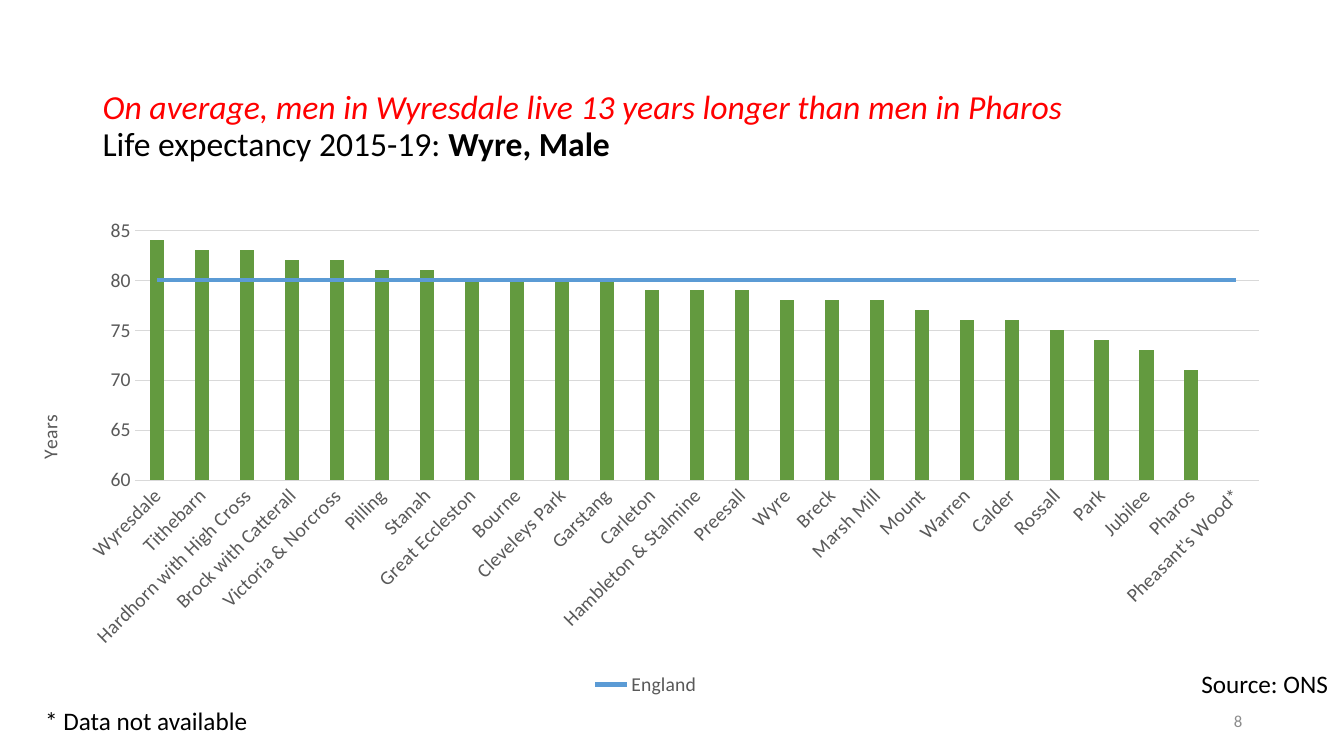
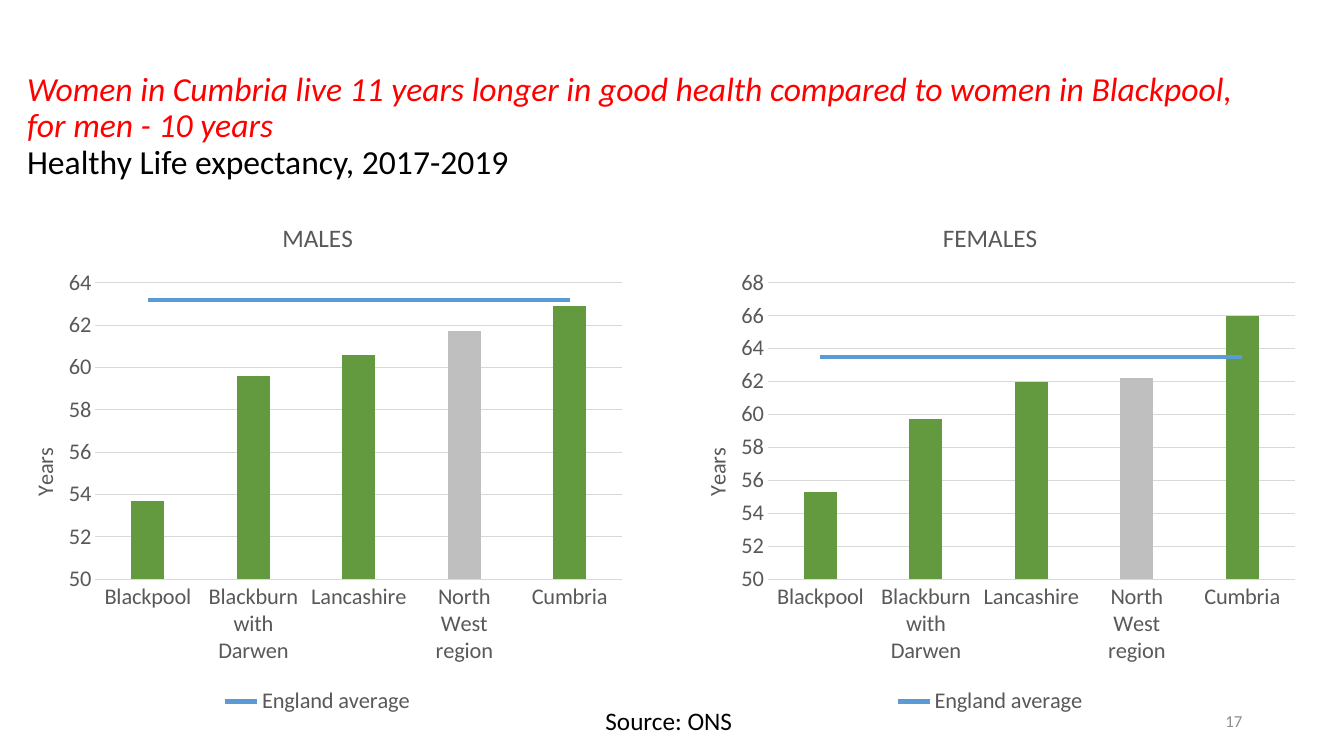
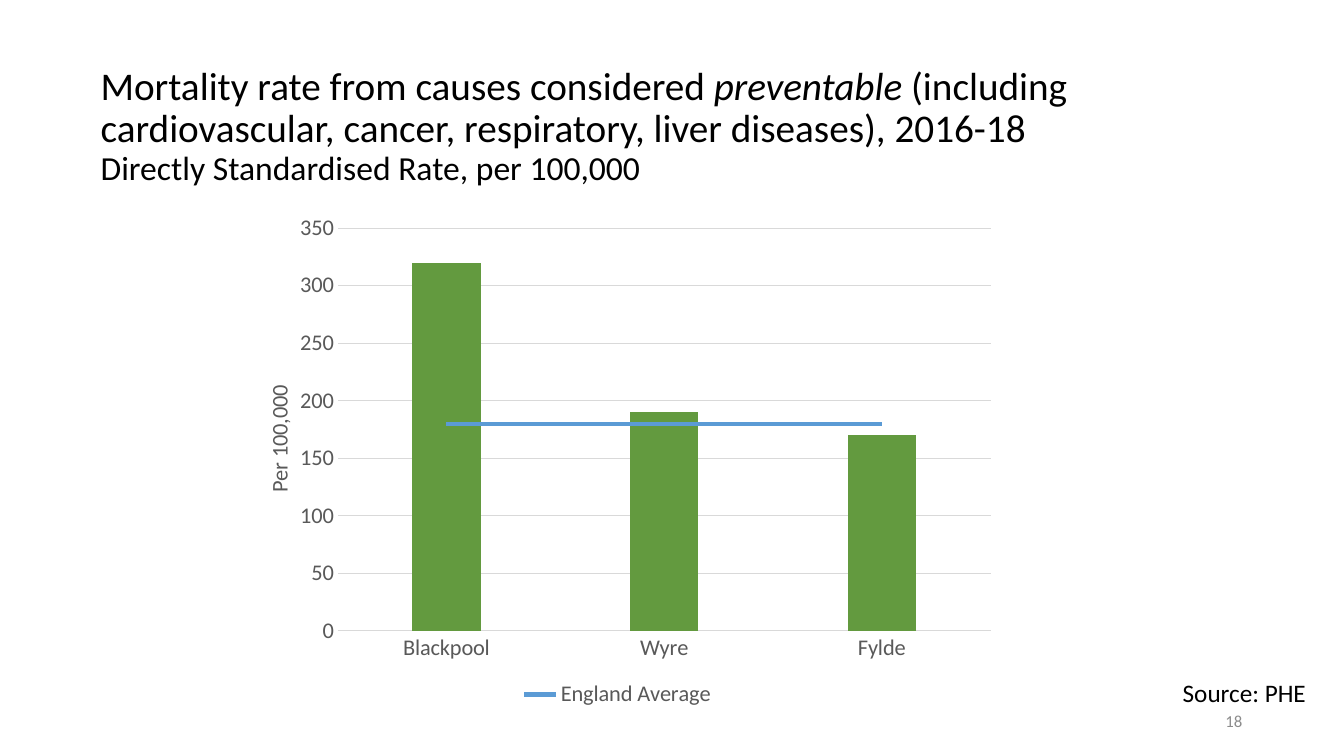
"""Life expectancy and mortality slides with column charts and an England reference line."""
from lxml import etree
from pptx import Presentation
from pptx.chart.data import CategoryChartData
from pptx.dml.color import RGBColor
from pptx.enum.chart import XL_CHART_TYPE as CT, XL_LEGEND_POSITION as LP
from pptx.enum.chart import XL_MARKER_STYLE as MS, XL_TICK_MARK as TM
from pptx.enum.text import MSO_ANCHOR as ANCHOR, PP_ALIGN as ALIGN
from pptx.oxml.ns import qn
from pptx.util import Inches, Pt

COLORS = {"black": "000000", "red": "FF0000", "label": "595959", "number": "8C8C8C",
          "grid": "D9D9D9", "bar": "639A3F", "region": "BFBFBF", "england": "5B9BD5"}
FONT = "Calibri"


def rgb(name):
    return RGBColor.from_string(COLORS[name])


def style(font, size, color="black", **flags):
    font.name, font.size, font.color.rgb = FONT, Pt(size), rgb(color)
    for flag, value in flags.items():
        setattr(font, flag, value)


def add(parent, tag, val=None):
    el = etree.SubElement(parent, qn(tag))
    if val is not None:
        el.set("val", str(val))
    return el


def place(parent, index, inner=False, **fractions):
    for old in parent.findall(qn("c:layout")):
        parent.remove(old)
    layout = etree.Element(qn("c:layout"))
    manual = add(layout, "c:manualLayout")
    if inner:
        add(manual, "c:layoutTarget", "inner")
    for key in ("x", "y"):
        add(manual, f"c:{key}Mode", "edge")
    for key, value in fractions.items():
        add(manual, f"c:{key}", value)
    parent.insert(index, layout)


def split_line(chart):
    bars = chart.element.xpath(".//c:barChart")[0]
    ser = bars.findall(qn("c:ser"))[1]
    for el in ser.findall(qn("c:invertIfNegative")):
        ser.remove(el)
    line = etree.Element(qn("c:lineChart"))
    add(line, "c:grouping", "standard")
    add(line, "c:varyColors", 0)
    line.append(ser)
    add(line, "c:marker", 1)
    for ax in bars.findall(qn("c:axId")):
        add(line, "c:axId", ax.get("val"))
    bars.addnext(line)


class Deck:
    def __init__(self):
        self.prs = Presentation()
        self.prs.slide_width, self.prs.slide_height = Inches(13.33), Inches(7.5)

    def slide(self, number):
        self.s = self.prs.slides.add_slide(self.prs.slide_layouts[6])
        self.text(str(number), 9.42, 6.95, 3, align=ALIGN.RIGHT, size=12,
                  color="number", anchor=ANCHOR.MIDDLE)

    def box(self, x, y, w, h, anchor):
        tf = self.s.shapes.add_textbox(Inches(x), Inches(y), Inches(w), Inches(h)).text_frame
        tf.word_wrap, tf.vertical_anchor = True, anchor
        return tf.paragraphs[0]

    def text(self, text, x, y, w, align=ALIGN.LEFT, size=18, color="black", anchor=ANCHOR.TOP):
        p = self.box(x, y, w, 0.4, anchor)
        p.text, p.alignment = text, align
        style(p.font, size, color)

    def title(self, x, w, lines):
        p = self.box(x, 0.72, w, 1.08, ANCHOR.MIDDLE)
        p.line_spacing = 0.9
        for i, line in enumerate(lines):
            if i:
                p.add_line_break()
            for text, size, color, flags in line:
                r = p.add_run()
                r.text = text
                style(r.font, size, color, **flags)

    def chart(self, at, cats, vals, england, scale, plot, unit, unit_at,
              size=16, title=None, gray=None, rotation=None):
        data = CategoryChartData()
        data.categories = cats
        data.add_series("Series 1", vals)
        data.add_series(england[0], [england[1]] * len(cats))
        chart = self.s.shapes.add_chart(CT.COLUMN_CLUSTERED, *map(Inches, at), data).chart
        style(chart.font, size, "label")
        chart.has_title = title is not None
        if title:
            p = chart.chart_title.text_frame.paragraphs[0]
            p.text = title
            style(p.font, 18, "label", bold=False)
        split_line(chart)
        self.series(chart, gray)
        self.axes(chart, scale, size, unit, unit_at, rotation)
        self.legend(chart, size)
        place(chart.element.xpath(".//c:plotArea")[0], 0, True, **dict(zip("xywh", plot)))

    def series(self, chart, gray):
        bars, lines = chart.plots
        bars.gap_width, bars.overlap, bars.vary_by_categories = 219, -27, False
        bar, line = bars.series[0], lines.series[0]
        bar.format.fill.solid()
        bar.format.fill.fore_color.rgb = rgb("bar")
        if gray is not None:
            fill = bar.points[gray].format.fill
            fill.solid()
            fill.fore_color.rgb = rgb("region")
        line.smooth, line.marker.style = False, MS.NONE
        line.format.line.color.rgb, line.format.line.width = rgb("england"), Pt(3)

    def axes(self, chart, scale, size, unit, unit_at, rotation):
        cat, val = chart.category_axis, chart.value_axis
        for axis in (cat, val):
            axis.major_tick_mark = axis.minor_tick_mark = TM.NONE
            style(axis.tick_labels.font, size, "label")
        if rotation:
            cat.tick_labels.font
            chart.element.xpath(".//c:catAx/c:txPr/a:bodyPr")[0].set("rot", str(rotation * 60000))
        val.minimum_scale, val.maximum_scale, val.major_unit = scale
        val.tick_labels.number_format, val.tick_labels.number_format_is_linked = "0", False
        val.format.line.fill.background()
        val.has_major_gridlines = True
        for line in (cat.format.line, val.major_gridlines.format.line):
            line.color.rgb, line.width = rgb("grid"), Pt(0.75)
        p = val.axis_title.text_frame.paragraphs[0]
        p.text = unit
        style(p.font, size, "label", bold=False)
        title = val.axis_title.element if hasattr(val.axis_title, "element") else \
            chart.element.xpath(".//c:valAx/c:title")[0]
        title.xpath(".//a:bodyPr")[0].set("rot", "-5400000")
        place(title, 1, **dict(zip("xy", unit_at)))

    def legend(self, chart, size):
        chart.has_legend = True
        chart.legend.position, chart.legend.include_in_layout = LP.BOTTOM, False
        style(chart.legend.font, size, "label")
        entry = etree.Element(qn("c:legendEntry"))
        add(entry, "c:idx", 0)
        add(entry, "c:delete", 1)
        chart.element.xpath(".//c:legend/c:legendPos")[0].addnext(entry)


def main():
    d = Deck()
    italic = {"italic": True}

    d.slide(8)
    d.title(0.92, 11.5, [
        [("On average, men in Wyresdale live 13 years longer than men in Pharos", 24, "red", italic)],
        [("Life expectancy 2015-19: ", 24, "black", {}), ("Wyre, Male", 24, "black", {"bold": True})]])
    d.text("Source: ONS", 10.74, 6.58, 2.53, ALIGN.RIGHT)
    wards = ["Wyresdale", "Tithebarn", "Hardhorn with High Cross", "Brock with Catterall",
             "Victoria & Norcross", "Pilling", "Stanah", "Great Eccleston", "Bourne",
             "Cleveleys Park", "Garstang", "Carleton", "Hambleton & Stalmine", "Preesall",
             "Wyre", "Breck", "Marsh Mill", "Mount", "Warren", "Calder", "Rossall", "Park",
             "Jubilee", "Pharos", "Pheasant's Wood*"]
    years = [84, 83, 83, 82, 82, 81, 81, 80, 80, 80, 80, 79, 79, 79, 78, 78, 78, 77, 76, 76,
             75, 74, 73, 71, None]
    d.chart((0.07, 2.09, 12.67, 4.86), wards, years, ("England", 80), (60, 85, 5),
            (0.1, 0.04, 0.88, 0.51), "Years", (0.02, 0.41), size=14, rotation=-45)
    d.text("* Data not available", 0.35, 6.95, 3.57)

    d.slide(17)
    d.title(0.17, 12.25, [
        [("Women in Cumbria live 11 years longer in good health compared to women in Blackpool, "
          "for men - 10 years", 24, "red", italic)],
        [("Healthy Life expectancy, 2017-2019", 24, "black", {})]])
    d.text("Source: ONS", 4.83, 6.95, 2.53, ALIGN.RIGHT)
    areas = ["Blackpool", "Blackburn with Darwen", "Lancashire", "North West region", "Cumbria"]
    for x, sex, vals, average, top in (
            (0, "MALES", [53.7, 59.6, 60.6, 61.7, 62.9], 63.2, 64),
            (6.67, "FEMALES", [55.3, 59.7, 62, 62.2, 66], 63.5, 68)):
        d.chart((x, 1.98, 6.3, 5.16), areas, vals, ("England average", average), (50, top, 2),
                (0.15, 0.16, 0.83, 0.57), "Years", (0.04, 0.47), title=sex, gray=3)

    d.slide(18)
    d.title(0.9, 11.5, [
        [("Mortality rate from causes considered ", 28, "black", {}),
         ("preventable", 28, "black", italic),
         (" (including cardiovascular, cancer, respiratory, liver diseases), 2016-18",
          28, "black", {})],
        [("Directly Standardised Rate, per 100,000", 24, "black", {})]])
    d.chart((2.27, 2.01, 7.71, 5.06), ["Blackpool", "Wyre", "Fylde"], [320, 190, 170],
            ("England Average", 180), (0, 350, 50), (0.14, 0.05, 0.84, 0.79),
            "Per 100,000", (0.04, 0.35))
    d.text("Source: PHE", 11.16, 6.67, 1.89, ALIGN.RIGHT)
    d.prs.save("out.pptx")


if __name__ == "__main__":
    main()
